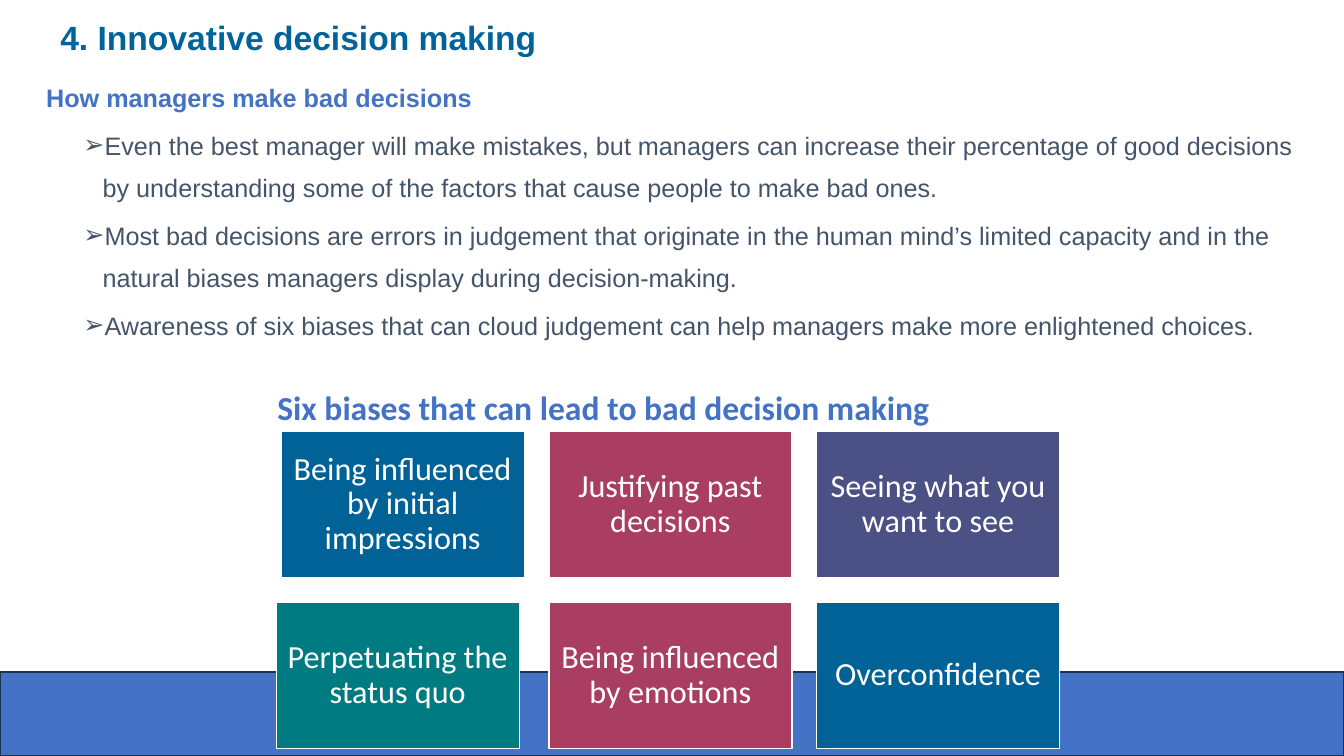
from lxml import etree
from pptx import Presentation
from pptx import util as u
from pptx.dml.color import RGBColor
from pptx.enum import shapes, text
from pptx.oxml.ns import qn

WIDTH, HEIGHT = 13.33, 7.5
COLOURS = {
    "title": "00649A", "accent": "4472C4", "body": "44546A", "band_line": "1E3256",
    "white": "FFFFFF", "blue": "006296", "berry": "A93E62", "indigo": "4B5085",
    "teal": "007B82",
}
TITLE = {"size": u.Pt(24), "name": "Arial", "bold": True}
SUBTITLE = {"size": u.Pt(18), "name": "Arial", "bold": True}
BODY = {"size": u.Pt(18), "name": "Arial", "bold": False}
HEADING = {"size": u.Pt(24), "name": "Calibri", "bold": True}
CARD = {"size": u.Pt(23), "name": "Calibri", "bold": False}
CENTRED = {"alignment": text.PP_ALIGN.CENTER, "line_spacing": 0.9}

POINTS = [
    "Even the best manager will make mistakes, but managers can increase their percentage "
    "of good decisions by understanding some of the factors that cause people to make bad ones.",
    "Most bad decisions are errors in judgement that originate in the human mind’s limited "
    "capacity and in the natural biases managers display during decision-making.",
    "Awareness of six biases that can cloud judgement can help managers make more "
    "enlightened choices.",
]
# Wording, colour, and sideways shift from the grid column
BIASES = [
    [("Being influenced by initial impressions", "blue", 0),
     ("Justifying past decisions", "berry", 0),
     ("Seeing what you want to see", "indigo", 0)],
    [("Perpetuating the status quo", "teal", -0.05),
     ("Being influenced by emotions", "berry", 0),
     ("Overconfidence", "blue", 0)],
]
CARD_LEFT, CARD_TOP = 2.79, 4.28
CARD_WIDTH, CARD_HEIGHT = 2.41, 1.45
CARD_GAP = 0.245


def colour(name):
    return RGBColor.from_string(COLOURS[name])


def set_all(target, values):
    for name, value in values.items():
        setattr(target, name, value)


def write(paragraph, wording, font, colour_name, layout):
    paragraph.text = wording
    set_all(paragraph, layout)
    set_all(paragraph.font, font)
    paragraph.font.color.rgb = colour(colour_name)


def add_text_box(slide, left, top, width, height, anchor):
    box = slide.shapes.add_textbox(*map(u.Inches, (left, top, width, height)))
    set_all(box.text_frame, {"word_wrap": True, "vertical_anchor": anchor})
    return box.text_frame


def add_rectangle(slide, left, top, width, height, fill, line):
    shape = slide.shapes.add_shape(
        shapes.MSO_SHAPE.RECTANGLE, *map(u.Inches, (left, top, width, height)))
    shape.shadow.inherit = False
    shape.fill.solid()
    shape.fill.fore_color.rgb = colour(fill)
    shape.line.color.rgb = colour(line)
    shape.line.width = u.Pt(1)
    return shape


def add_bullet(paragraph):
    properties = paragraph._p.get_or_add_pPr()
    properties.set("marL", str(u.Inches(0.56)))
    properties.set("indent", str(u.Inches(-0.19)))
    etree.SubElement(properties, qn("a:buFont"), typeface="Arial")
    etree.SubElement(properties, qn("a:buChar"), char="➢")


def add_body(slide):
    frame = add_text_box(slide, 0.36, 0.65, 12.74, 2.76, text.MSO_ANCHOR.TOP)
    write(frame.paragraphs[0], "How managers make bad decisions", SUBTITLE, "accent",
          {"line_spacing": 1.4})
    for point in POINTS:
        paragraph = frame.add_paragraph()
        add_bullet(paragraph)
        write(paragraph, point, BODY, "body",
              {"line_spacing": 1.4, "space_before": u.Pt(3.8)})


def add_bias_cards(slide):
    for row, cards in enumerate(BIASES):
        for column, (wording, fill, shift) in enumerate(cards):
            left = CARD_LEFT + column * (CARD_WIDTH + CARD_GAP) + shift
            top = CARD_TOP + row * (CARD_HEIGHT + CARD_GAP)
            card = add_rectangle(slide, left, top, CARD_WIDTH, CARD_HEIGHT, fill, "white")
            frame = card.text_frame
            set_all(frame, {"word_wrap": True, "vertical_anchor": text.MSO_ANCHOR.MIDDLE})
            for side in ("left", "top", "right", "bottom"):
                setattr(frame, f"margin_{side}", u.Inches(0.1))
            write(frame.paragraphs[0], wording, CARD, "white", CENTRED)


def main():
    presentation = Presentation()
    presentation.slide_width = u.Inches(WIDTH)
    presentation.slide_height = u.Inches(HEIGHT)
    slide = presentation.slides.add_slide(presentation.slide_layouts[6])

    title = add_text_box(slide, 0.5, 0.09, 10.9, 0.6, text.MSO_ANCHOR.MIDDLE)
    write(title.paragraphs[0], "4. Innovative decision making", TITLE, "title",
          {"line_spacing": 0.9})
    add_body(slide)
    heading = add_text_box(slide, 2.49, 3.79, 6.99, 0.55, text.MSO_ANCHOR.MIDDLE)
    write(heading.paragraphs[0], "Six biases that can lead to bad decision making",
          HEADING, "accent", CENTRED)
    band_height = HEIGHT / 9
    add_rectangle(slide, 0, HEIGHT - band_height, WIDTH, band_height, "accent", "band_line")
    add_bias_cards(slide)
    presentation.save("out.pptx")


if __name__ == "__main__":
    main()
